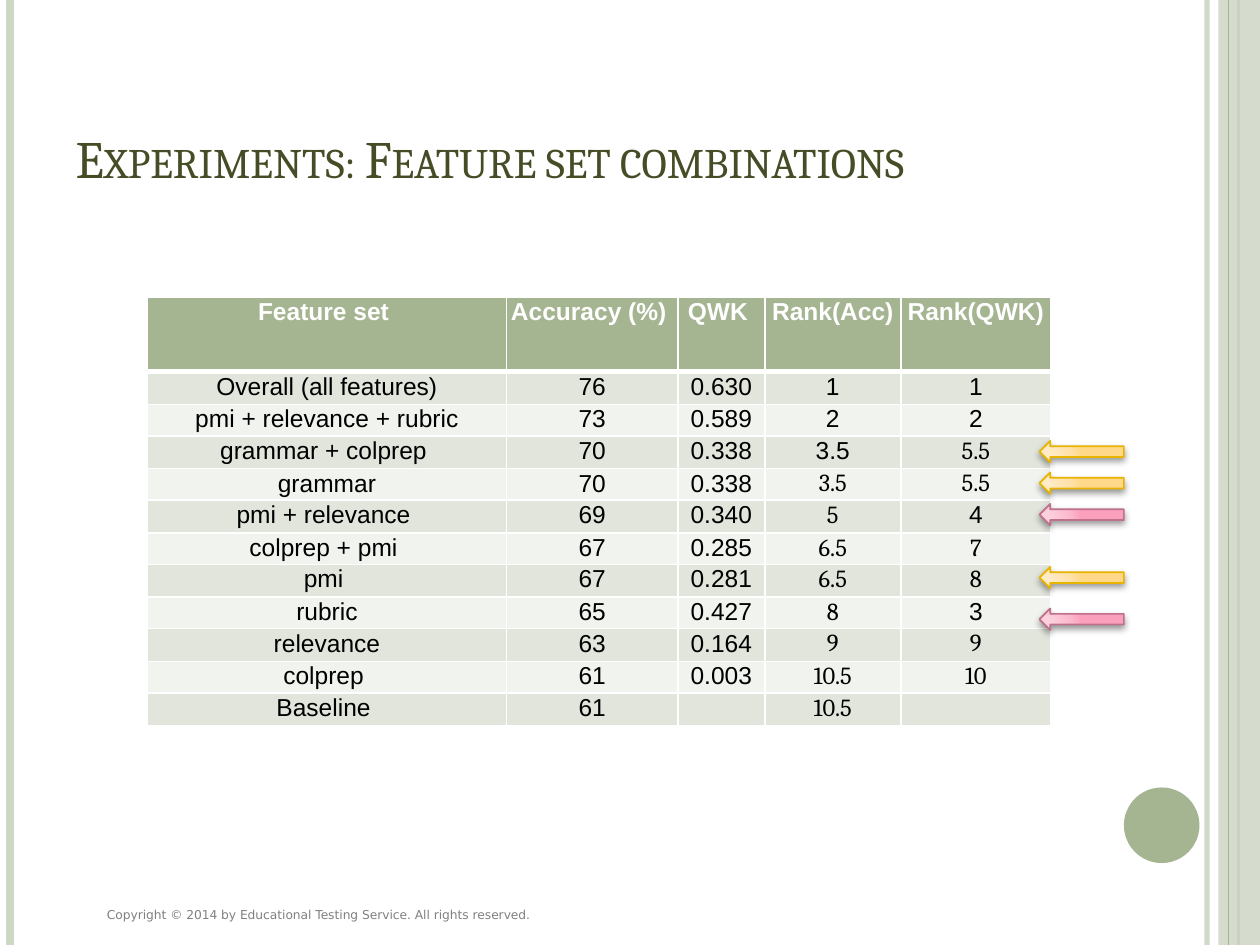
import lxml.etree
import pptx
import pptx.dml.color
import pptx.enum.shapes
import pptx.enum.text
import pptx.oxml
import pptx.oxml.ns
import pptx.util

Inches = pptx.util.Inches
Pt = pptx.util.Pt
qn = pptx.oxml.ns.qn
SHAPE = pptx.enum.shapes.MSO_SHAPE
LEFT = pptx.enum.text.PP_ALIGN.LEFT
MID = pptx.enum.text.PP_ALIGN.CENTER

HEADS = ["Feature set ", "Accuracy (%) ", "QWK ", "Rank(Acc)", "Rank(QWK)"]
ROWS = [
    ["Overall (all features)", "76", "0.630", "1", "1"],
    ["pmi + relevance + rubric", "73", "0.589", "2", "2"],
    ["grammar + colprep ", "70", "0.338", "3.5", "5.5"],
    ["grammar", "70", "0.338", "3.5", "5.5"],
    ["pmi + relevance ", "69", "0.340", "5", "4"],
    ["colprep + pmi ", "67", "0.285", "6.5", "7"],
    ["pmi ", "67", "0.281", "6.5", "8"],
    ["rubric", "65", "0.427", "8", "3"],
    ["relevance", "63", "0.164", "9", "9"],
    ["colprep ", "61", "0.003", "10.5", "10"],
    ["Baseline ", "61", "", "10.5", ""],
]
WIDTHS = [2.85, 1.36, 0.69, 1.08, 1.19]
SERIF = {3: range(4, 12), 4: (3, 4, 6, 7, 9, 10)}
GOLD = ["FFEDCC", "FFEBC7", "FFE1A9", "FFD989"]
PINK = ["FCD4E0", "FCD0DD", "FBB8CD", "FBA0BC"]


def shade(color, value):
    """Give a colour format the colour of a hex string."""
    color.rgb = pptx.dml.color.RGBColor.from_string(value)


def style(item, values):
    """Set each attribute named in a dict."""
    for name, value in values.items():
        setattr(item, name, value)


def node(parent, tag, **attrs):
    """Add a drawing element under a parent."""
    return lxml.etree.SubElement(parent, qn(tag), **attrs)


def fade(fill, percent):
    """Set the opacity of a solid colour found under an element."""
    color = next(fill.iter(qn("a:srgbClr")))
    node(color, "a:alpha", val=str(percent * 1000))


def write(para, text, size, face, color, bold=False, align=LEFT):
    """Write one formatted run and return it."""
    para.alignment = align
    run = para.add_run()
    run.text = text
    style(run.font, {"size": Pt(size), "name": face, "bold": bold})
    shade(run.font.color, color)
    return run


def rule(slide, left, top, height, color, width, alpha=None):
    """Draw an upright line."""
    kind = pptx.enum.shapes.MSO_CONNECTOR.STRAIGHT
    line = slide.shapes.add_connector(
        kind, Inches(left), Inches(top), Inches(left), Inches(top + height))
    line.line.width = Pt(width)
    shade(line.line.color, color)
    if alpha:
        fade(line.line._ln, alpha)
    node(line._element.spPr, "a:effectLst")


def block(slide, kind, box, color):
    """Draw a plain filled shape."""
    shape = slide.shapes.add_shape(kind, *map(Inches, box))
    shape.shadow.inherit = False
    shape.fill.solid()
    shade(shape.fill.fore_color, color)
    shape.line.fill.background()
    return shape


def frame(slide, box):
    """Draw the side rules, the band and the disc."""
    left, top, width, height = box
    right = left + width
    rule(slide, right - 0.42, top, height, "CFD7C7", 3, 93)
    rule(slide, left + 0.08, top, height, "CFD7C7", 4.5)
    rule(slide, right - 0.17, top, height, "A5B592", 1.5)
    band = block(slide, SHAPE.RECTANGLE, (right - 0.33, top, 0.33, height), "CFD7C7")
    fade(band._element.spPr, 87)
    rule(slide, right - 0.25, top, height, "A5B592", 0.75)
    block(slide, SHAPE.OVAL, (right - 1.08, top + height - 1.25, 0.6, 0.6), "A5B592")


def footer(slide, box):
    """Write the copyright line."""
    text = slide.shapes.add_textbox(*map(Inches, box)).text_frame
    text.word_wrap = True
    write(text.paragraphs[0],
          "Copyright © 2014 by Educational Testing Service. All rights reserved.",
          7, "DejaVu Sans", "808080")


def title(slide, box):
    """Place and fill the title."""
    head = slide.shapes.title
    style(head, dict(zip(("left", "top", "width", "height"), map(Inches, box))))
    style(head.text_frame, {
        "word_wrap": True,
        "auto_size": pptx.enum.text.MSO_AUTO_SIZE.NONE,
        "vertical_anchor": pptx.enum.text.MSO_ANCHOR.BOTTOM,
    })
    run = write(head.text_frame.paragraphs[0], "Experiments: Feature set combinations",
                30, "Cambria", "444D26")
    run.font._element.set("cap", "small")


def border(cell, widths):
    """Give the sides of a cell white lines."""
    for side, width in widths.items():
        line = node(cell._tc.get_or_add_tcPr(), f"a:ln{side}", w=str(Pt(width)))
        node(node(line, "a:solidFill"), "a:srgbClr", val="FFFFFF")


def fill_cell(cell, text, row, col):
    """Write and format one cell by its place."""
    style(cell, {"margin_left": Inches(0.01), "margin_right": Inches(0.01),
                 "margin_top": Inches(0.01), "margin_bottom": 0})
    border(cell, {"L": 1, "R": 1, "T": 3 if row == 1 else 1, "B": 1 if row else 3})
    cell.fill.solid()
    shade(cell.fill.fore_color, ("F0F3EE", "E1E5DC")[row % 2] if row else "A5B592")
    para = cell.text_frame.paragraphs[0]
    if text:
        face = "Cambria" if row in SERIF.get(col, ()) else "Arial"
        write(para, text, 14, face, "000000" if row else "FFFFFF", not row, MID)
    else:
        node(para._p, "a:endParaRPr", sz="1400")


def scores(slide, box):
    """Build the table of feature sets."""
    data = [HEADS] + ROWS
    table = slide.shapes.add_table(len(data), len(HEADS), *map(Inches, box)).table
    for col, width in zip(table.columns, WIDTHS):
        col.width = Inches(width)
    for row, texts in enumerate(data):
        table.rows[row].height = Inches((0.25 + row % 2 * 0.01) if row else 0.59)
        for col, text in enumerate(texts):
            fill_cell(table.cell(row, col), text, row, col)


def arrow(group, box, stops, edge):
    """Draw one glowing arrow that points left."""
    shape = group.shapes.add_shape(SHAPE.LEFT_ARROW, *map(Inches, box))
    shape.line.width = Pt(1)
    shade(shape.line.color, edge)
    shape.fill.background()
    props = shape._element.spPr
    grad = pptx.oxml.parse_xml(f'<a:gradFill {pptx.oxml.ns.nsdecls("a")}/>')
    marks = node(grad, "a:gsLst")
    for place, color in zip((0, 30, 75, 100), stops):
        node(node(marks, "a:gs", pos=str(place * 1000)), "a:srgbClr", val=color)
    node(node(grad, "a:path", path="circle"), "a:fillToRect",
         l="5000", t="100000", r="120000", b="10000")
    props.replace(props.find(qn("a:noFill")), grad)
    shape.shadow.inherit = False
    glow = node(props.find(qn("a:effectLst")), "a:outerShdw", blurRad=str(Pt(4)),
                dist=str(Pt(2)), dir="5400000", rotWithShape="0")
    node(node(glow, "a:srgbClr", val="000000"), "a:alpha", val="40000")


def arrows(slide, box, drops, stops, edge):
    """Group arrows of one colour at drops below the top of a box."""
    left, top, width, height = box
    group = slide.shapes.add_group_shape()
    for drop in drops:
        arrow(group, (left, top + drop, width, height), stops, edge)


def main():
    """Build the slide and save it."""
    deck = pptx.Presentation()
    style(deck, {"slide_width": Inches(10), "slide_height": Inches(7.5)})
    slide = deck.slides.add_slide(deck.slide_layouts[5])
    frame(slide, (0, 0, 10, 7.5))
    footer(slide, (0.75, 7.15, 6.25, 0.22))
    title(slide, (0.5, 0.3, 8.17, 1.25))
    scores(slide, (1.17, 2.36, 7.17, 3.39))
    first = (8.25, 3.5, 0.67, 0.17)
    arrows(slide, first, (0.25, 0, 1), GOLD, "E9B400")
    arrows(slide, first, (1.33, 0.5), PINK, "BF708B")
    deck.save("out.pptx")


if __name__ == "__main__":
    main()
